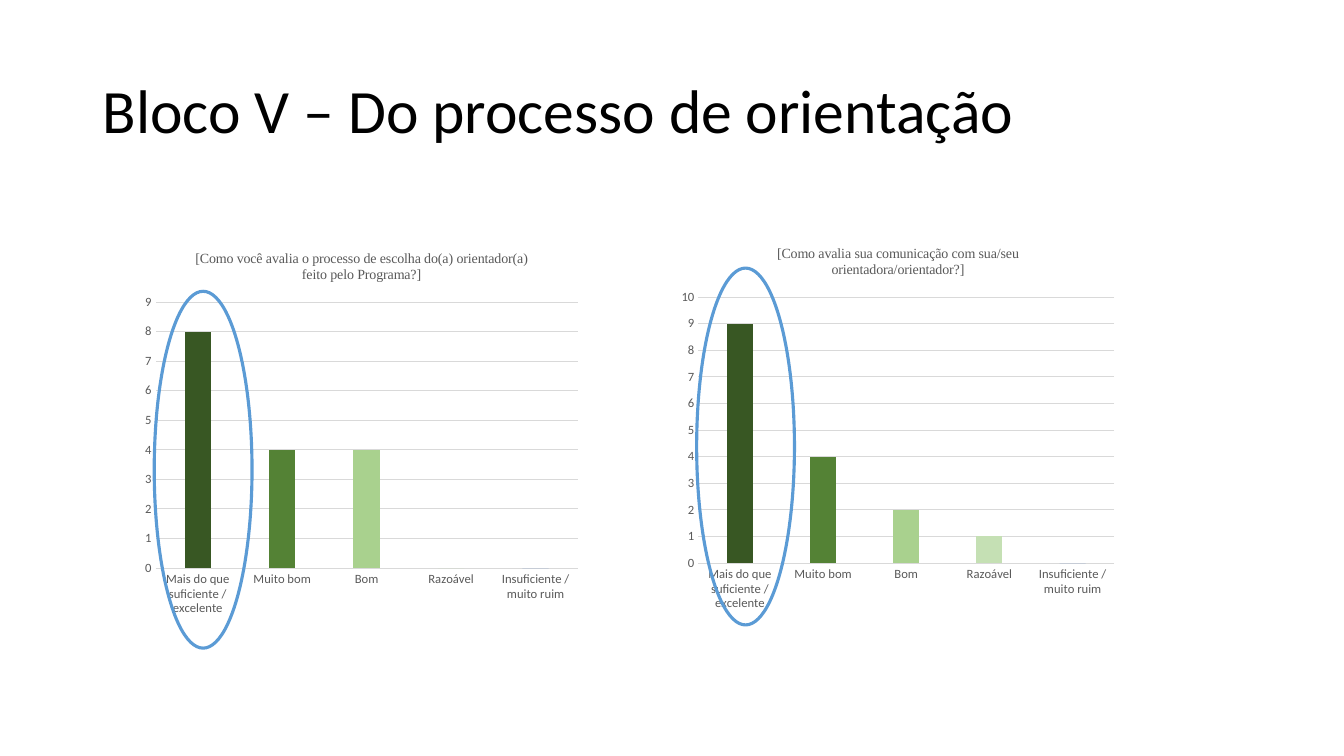
import pptx
import pptx.chart.data
import pptx.dml.color
import pptx.enum.chart
import pptx.enum.shapes
import pptx.enum.text
import pptx.util

PX = 9144  # 100 px to the inch
RGB = pptx.dml.color.RGBColor
BLACK = RGB(0x00, 0x00, 0x00)
GREY_TEXT = RGB(0x59, 0x59, 0x59)
GRID = RGB(0xD9, 0xD9, 0xD9)
SERIES_BLUE = RGB(0x44, 0x72, 0xC4)
RING_BLUE = RGB(0x5B, 0x9B, 0xD5)
RATING_GREENS = [
    RGB(0x38, 0x57, 0x23),
    RGB(0x54, 0x82, 0x35),
    RGB(0xA9, 0xD1, 0x8E),
    RGB(0xC5, 0xE0, 0xB4),
]

RATINGS = [
    "Mais do que suficiente / excelente",
    "Muito bom",
    "Bom",
    "Razoável",
    "Insuficiente / muito ruim",
]
CHART_SIZE = (447, 387)
RING_SIZE = (97, 354)

# Chart corner, ring offset inside the chart, question, answers, top of scale
QUESTIONS = [
    ((135, 232), (18, 57),
     "[Como você avalia o processo de escolha do(a) orientador(a) feito pelo Programa?]",
     (8, 4, 4, 0, 0), 9),
    ((667, 227), (24, 39),
     "[Como avalia sua comunicação com sua/seu orientadora/orientador?]",
     (9, 4, 2, 1, 0), 10),
]


def px(*lengths):
    return [pptx.util.Emu(length * PX) for length in lengths]


def set_font(font, size, color, face="Calibri"):
    font.size = pptx.util.Pt(size)
    font.name = face
    font.bold = False
    font.color.rgb = color


def write(frame, text, *, size, color, face="Calibri", align=None, spacing=None):
    paragraph = frame.paragraphs[0]
    paragraph.alignment = align
    paragraph.line_spacing = spacing
    run = paragraph.add_run()
    run.text = text
    set_font(run.font, size, color, face)


def add_title(slide, box, text):
    title = slide.shapes.title
    title.left, title.top, title.width, title.height = px(*box)
    frame = title.text_frame
    frame.word_wrap = True
    frame.vertical_anchor = pptx.enum.text.MSO_ANCHOR.MIDDLE
    write(frame, text, size=44, color=BLACK, spacing=0.9,
          align=pptx.enum.text.PP_ALIGN.LEFT)


def format_axes(chart, top):
    for axis in (chart.category_axis, chart.value_axis):
        axis.major_tick_mark = pptx.enum.chart.XL_TICK_MARK.NONE
        axis.minor_tick_mark = pptx.enum.chart.XL_TICK_MARK.NONE
        set_font(axis.tick_labels.font, 9, GREY_TEXT)
    counts = chart.value_axis
    counts.minimum_scale, counts.maximum_scale, counts.major_unit = 0, top, 1
    counts.has_major_gridlines = True
    counts.format.line.fill.background()
    for line in (chart.category_axis.format.line, counts.major_gridlines.format.line):
        line.color.rgb = GRID
        line.width = pptx.util.Pt(0.75)


def add_question_chart(slide, box, question, answers, top):
    data = pptx.chart.data.CategoryChartData(number_format="General")
    data.categories = RATINGS
    data.add_series(question, answers)
    chart = slide.shapes.add_chart(
        pptx.enum.chart.XL_CHART_TYPE.COLUMN_CLUSTERED, *px(*box), data).chart
    set_font(chart.font, 10, BLACK)
    chart.has_legend = False
    chart.has_title = True
    write(chart.chart_title.text_frame, question, size=10, color=GREY_TEXT,
          face="Times New Roman")
    format_axes(chart, top)

    # Columns, from best to worst rating
    plot = chart.plots[0]
    plot.gap_width, plot.overlap = 219, -27
    plot.vary_by_categories = False
    columns = plot.series[0]
    columns.format.fill.solid()
    columns.format.fill.fore_color.rgb = SERIES_BLUE
    for index, green in enumerate(RATING_GREENS):
        fill = columns.points[index].format.fill
        fill.solid()
        fill.fore_color.rgb = green


def add_ring(slide, box):
    ring = slide.shapes.add_shape(pptx.enum.shapes.MSO_SHAPE.OVAL, *px(*box))
    ring.shadow.inherit = False
    ring.fill.background()
    ring.line.color.rgb = RING_BLUE
    ring.line.width = pptx.util.Pt(2.25)


def main():
    deck = pptx.Presentation()
    deck.slide_width, deck.slide_height = px(1333, 750)
    slide = deck.slides.add_slide(deck.slide_layouts.get_by_name("Title Only"))
    add_title(slide, (92, 40, 1150, 145), "Bloco V – Do processo de orientação")

    # One chart per question, with a ring round its best rating
    for (left, top), (dx, dy), question, answers, scale_top in QUESTIONS:
        add_question_chart(slide, (left, top, *CHART_SIZE), question, answers, scale_top)
        add_ring(slide, (left + dx, top + dy, *RING_SIZE))

    deck.save("out.pptx")


if __name__ == "__main__":
    main()
